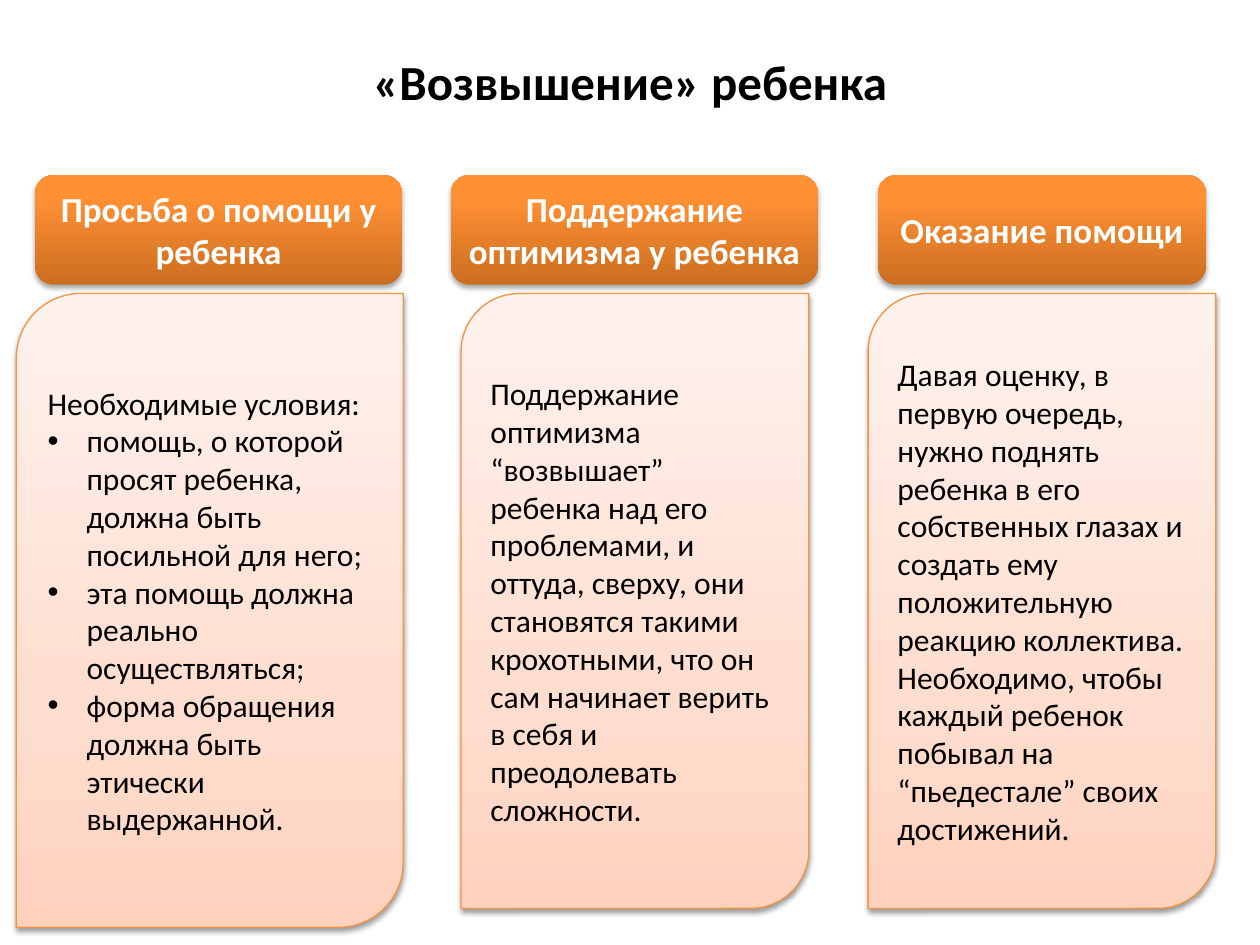
"""Build a slide with three ways of elevating a child, each a header over a text card."""
from lxml import etree
from pptx import Presentation
from pptx.dml import color
from pptx.enum import shapes, text
from pptx.oxml import parse_xml
from pptx.oxml.ns import nsdecls, qn
from pptx.util import Inches, Pt


def write(frame, lines, size, hex_color="000000", bold=False, align=text.PP_ALIGN.LEFT, bullets_from=None):
    frame.word_wrap = True
    frame.vertical_anchor = text.MSO_ANCHOR.MIDDLE
    for index, line in enumerate(lines):
        paragraph = frame.paragraphs[0] if index == 0 else frame.add_paragraph()
        paragraph.alignment = align
        run = paragraph.add_run()
        run.text = line
        run.font.name = "Calibri"
        run.font.size = Pt(size)
        run.font.bold = bold
        run.font.color.rgb = color.RGBColor.from_string(hex_color)
        if bullets_from is not None and index >= bullets_from:
            properties = paragraph._p.get_or_add_pPr()
            properties.set("marL", str(Inches(0.31)))
            properties.set("indent", str(Inches(-0.31)))
            etree.SubElement(properties, qn("a:buFont"), typeface="Arial")
            etree.SubElement(properties, qn("a:buChar"), char="•")


def add_panel(slide, kind, box, stops, shadow_alpha, shadow_distance, line_color=None):
    shape = slide.shapes.add_shape(kind, *[Inches(value) for value in box])
    stop_xml = "".join(
        f'<a:gs pos="{position * 1000}"><a:srgbClr val="{value}"/></a:gs>' for position, value in stops
    )
    shape._element.spPr.insert(2, parse_xml(
        f'<a:gradFill {nsdecls("a")} rotWithShape="1"><a:gsLst>{stop_xml}</a:gsLst>'
        '<a:lin ang="16200000" scaled="0"/></a:gradFill>'
    ))
    if line_color:
        shape.line.color.rgb = color.RGBColor.from_string(line_color)
        shape.line.width = Pt(0.75)
    else:
        shape.line.fill.background()
    shape.shadow.inherit = False
    shape._element.spPr.find(qn("a:effectLst")).append(parse_xml(
        f'<a:outerShdw {nsdecls("a")} blurRad="{Pt(3.1)}" dist="{Pt(shadow_distance)}" dir="5400000" '
        f'rotWithShape="0"><a:srgbClr val="000000"><a:alpha val="{shadow_alpha * 1000}"/>'
        '</a:srgbClr></a:outerShdw>'
    ))
    return shape


header_stops = [(0, "CC6E20"), (80, "FF9034"), (100, "FF9136")]
card_stops = [(0, "FFD2BD"), (35, "FFDED0"), (100, "FFF2ED")]
headers = [
    (0.28, 2.91, "Просьба о помощи у ребенка"),
    (3.58, 2.91, "Поддержание оптимизма у ребенка"),
    (6.97, 2.6, "Оказание помощи"),
]
cards = [
    (0.13, 3.07, 5.03, [
        "Необходимые условия:",
        "помощь, о которой просят ребенка, должна быть посильной для него;",
        "эта помощь должна реально осуществляться;",
        "форма обращения должна быть этически выдержанной.",
    ]),
    (3.66, 2.76, 4.88, [
        "Поддержание оптимизма “возвышает” ребенка над его проблемами, и оттуда, сверху, "
        "они становятся такими крохотными, что он сам начинает верить в себя и преодолевать сложности.",
    ]),
    (6.89, 2.76, 4.88, [
        "Давая оценку, в первую очередь, нужно поднять ребенка в его собственных глазах и создать ему "
        "положительную реакцию коллектива. Необходимо, чтобы каждый ребенок побывал на “пьедестале” "
        "своих достижений.",
    ]),
]

presentation = Presentation()
presentation.slide_width, presentation.slide_height = Inches(10), Inches(7.5)
slide = presentation.slides.add_slide(presentation.slide_layouts[5])

title = slide.shapes.title
title.left, title.top, title.width, title.height = Inches(0.5), Inches(0.3), Inches(9), Inches(0.69)
write(title.text_frame, ["«Возвышение» ребенка"], 28, bold=True, align=text.PP_ALIGN.CENTER)

for left, width, caption in headers:
    header = add_panel(slide, shapes.MSO_SHAPE.ROUNDED_RECTANGLE, (left, 1.39, width, 0.87), header_stops, 35, 1.8)
    write(header.text_frame, [caption], 20, "FFFFFF", bold=True, align=text.PP_ALIGN.CENTER)

for left, width, height, lines in cards:
    card = add_panel(
        slide, shapes.MSO_SHAPE.ROUND_2_DIAG_RECTANGLE, (left, 2.33, width, height), card_stops, 38, 1.6, "F69240"
    )
    write(card.text_frame, lines, 18, bullets_from=1)

presentation.save("out.pptx")
